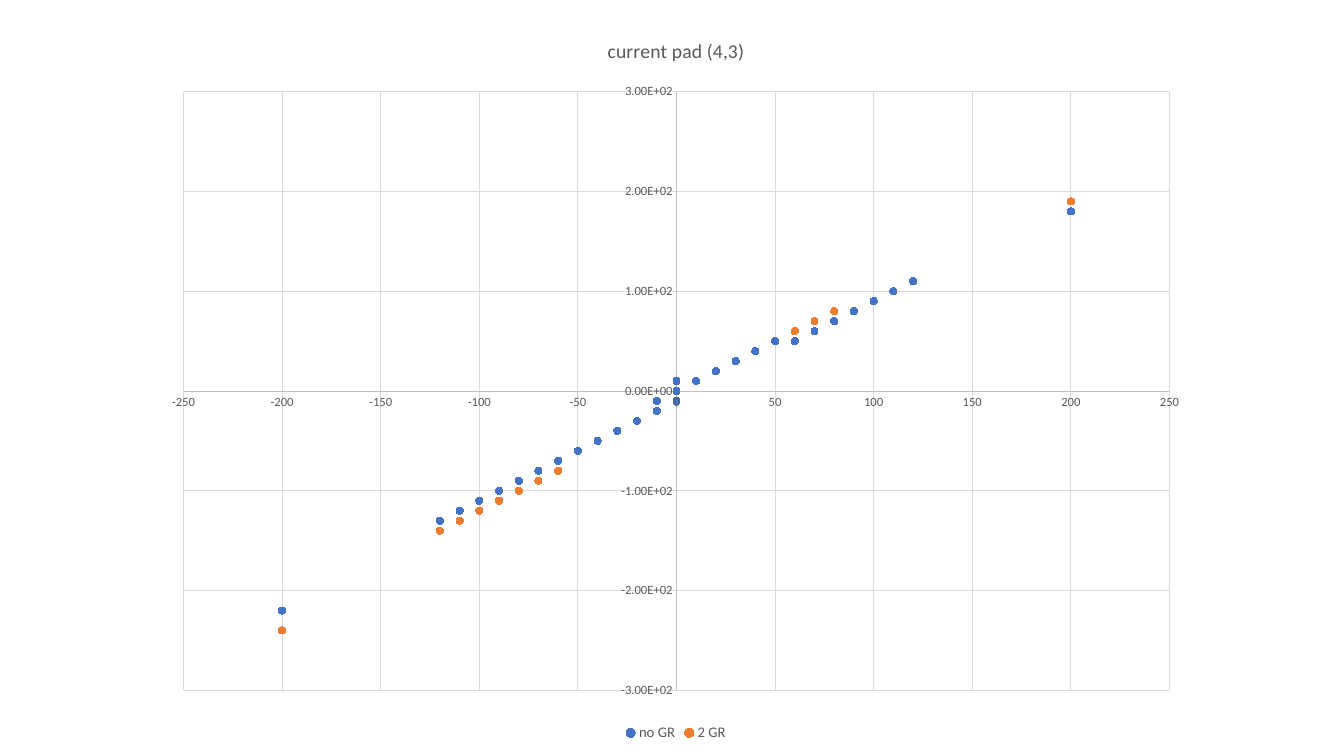
import pptx
import pptx.chart.data
import pptx.dml.color
import pptx.enum.chart
import pptx.oxml
import pptx.util
from pptx.util import Inches

THEME = {
    "font": "Calibri",
    "text": "595959",
    "axis": "BFBFBF",
    "grid": "D9D9D9",
    "title_size": 14,
    "label_size": 9,
    "legend_size": 10.5,
    "line_width": 0.75,
    "no GR": "4472C4",
    "2 GR": "ED7D31",
}

VOLTAGES = [-200, *range(-120, -10, 10), *[-10] * 3, *[0] * 5, *[10] * 3,
            *range(20, 121, 10), 200]
CURRENTS = {
    "no GR": [
        -220, *range(-130, -10, 10), -10, -10, -10, 0, 0, 0, 10, 10, 10, 10,
        20, 30, 40, 50, 50, 60, 70, 80, 90, 100, 110, 180],
    "2 GR": [
        -240, *range(-140, -70, 10), *range(-60, -10, 10), -10, -10, -10,
        0, 0, 0, 10, 10, 10, 10,
        20, 30, 40, 50, 60, 70, 80, 80, 90, 100, 110, 190],
}


def style_font(font, size):
    font.name = THEME["font"]
    font.size = pptx.util.Pt(size)
    font.bold = False
    font.color.rgb = pptx.dml.color.RGBColor.from_string(THEME["text"])


def style_line(line, color):
    line.color.rgb = pptx.dml.color.RGBColor.from_string(color)
    line.width = pptx.util.Pt(THEME["line_width"])


deck = pptx.Presentation()
deck.slide_width, deck.slide_height = Inches(13.33), Inches(7.5)
slide = deck.slides.add_slide(deck.slide_layouts[6])

measurements = pptx.chart.data.XyChartData()
for name, currents in CURRENTS.items():
    points = measurements.add_series(name)
    for voltage, current in zip(VOLTAGES, currents):
        points.add_data_point(voltage, current)

chart_left, chart_top = Inches(1.5), Inches(0.14)
chart_width, chart_height = Inches(10.41), Inches(7.26)
chart = slide.shapes.add_chart(
    pptx.enum.chart.XL_CHART_TYPE.XY_SCATTER,
    chart_left, chart_top, chart_width, chart_height, measurements).chart
style_font(chart.font, THEME["label_size"])

# Title and legend
chart.has_title = True
title = chart.chart_title.text_frame
title.text = "current pad (4,3)"
style_font(title.paragraphs[0].runs[0].font, THEME["title_size"])
chart.chart_title.include_in_layout = False

chart.has_legend = True
chart.legend.position = pptx.enum.chart.XL_LEGEND_POSITION.BOTTOM
chart.legend.include_in_layout = False
style_font(chart.legend.font, THEME["legend_size"])

# Axes
for axis, limit, step, number_format in (
        (chart.category_axis, 250, 50, "General"),
        (chart.value_axis, 300, 100, "0.00E+00")):
    settings = {
        "minimum_scale": -limit,
        "maximum_scale": limit,
        "major_unit": step,
        "has_major_gridlines": True,
        "major_tick_mark": pptx.enum.chart.XL_TICK_MARK.NONE,
        "minor_tick_mark": pptx.enum.chart.XL_TICK_MARK.NONE,
        "tick_label_position": pptx.enum.chart.XL_TICK_LABEL_POSITION.NEXT_TO_AXIS,
    }
    for setting, value in settings.items():
        setattr(axis, setting, value)
    axis.tick_labels.number_format = number_format
    axis.tick_labels.number_format_is_linked = False
    style_font(axis.tick_labels.font, THEME["label_size"])
    style_line(axis.format.line, THEME["axis"])
    style_line(axis.major_gridlines.format.line, THEME["grid"])

# Markers without joining lines
plot = chart.plots[0]
plot.vary_by_categories = False
for series in plot.series:
    color = pptx.dml.color.RGBColor.from_string(THEME[series.name])
    series.smooth = False
    series.format.line.fill.background()
    series.marker.style = pptx.enum.chart.XL_MARKER_STYLE.CIRCLE
    series.marker.size = 5
    series.marker.format.fill.solid()
    series.marker.format.fill.fore_color.rgb = color
    series.marker.format.line.color.rgb = color

# Fixed plot area, as fractions of the chart
plot_area = chart.element.chart.plotArea
for automatic_layout in plot_area.xpath("c:layout"):
    plot_area.remove(automatic_layout)
plot_area.insert(0, pptx.oxml.parse_xml(
    '<c:layout xmlns:c="http://schemas.openxmlformats.org/drawingml/2006/chart">'
    '<c:manualLayout><c:layoutTarget val="inner"/>'
    '<c:xMode val="edge"/><c:yMode val="edge"/>'
    f'<c:x val="{(Inches(1.82) - chart_left) / chart_width}"/>'
    f'<c:y val="{(Inches(0.91) - chart_top) / chart_height}"/>'
    f'<c:w val="{Inches(9.78) / chart_width}"/>'
    f'<c:h val="{Inches(5.94) / chart_height}"/>'
    '</c:manualLayout></c:layout>'))

deck.save("out.pptx")
